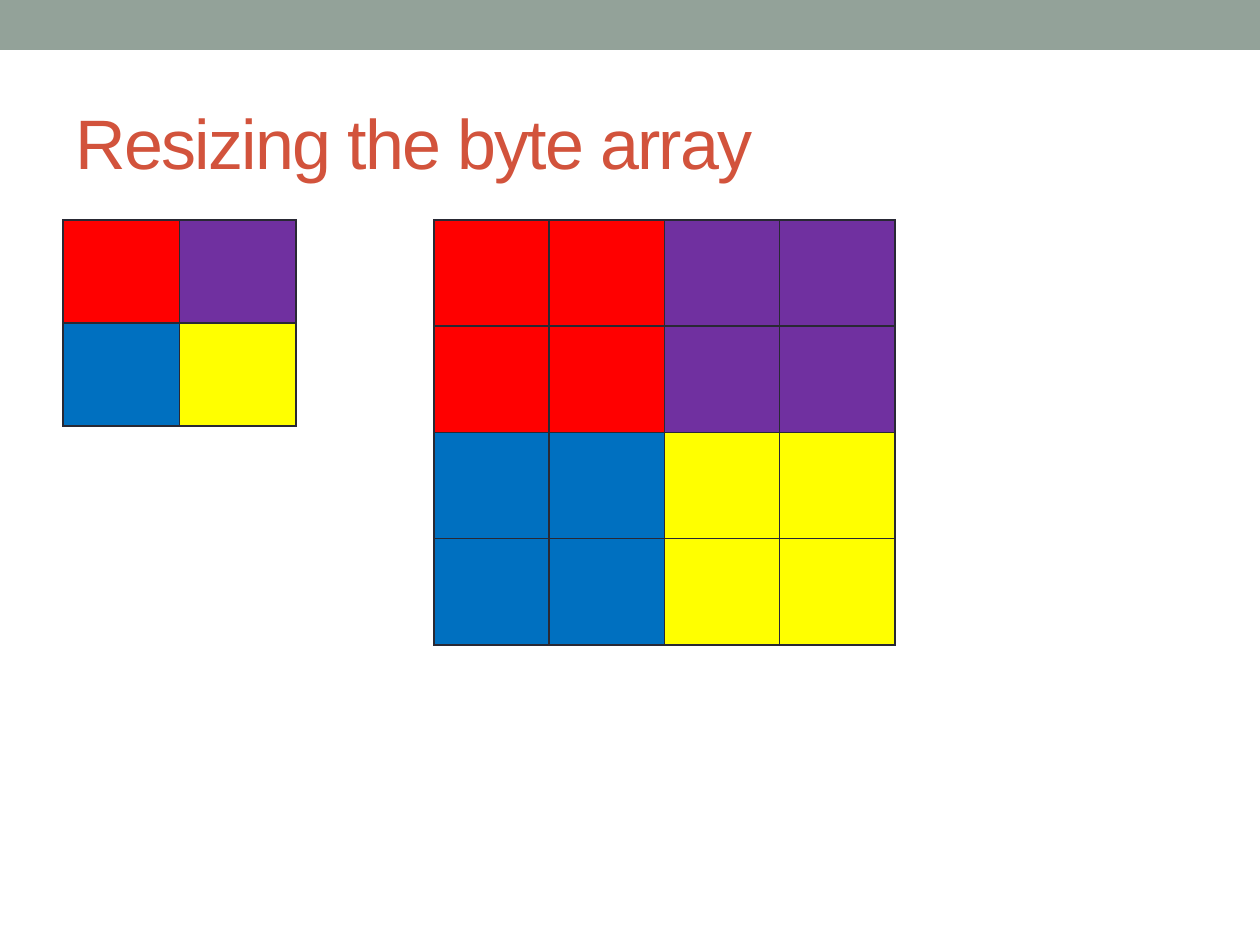
from lxml.etree import SubElement
from pptx import Presentation
from pptx.dml.color import RGBColor
from pptx.enum.shapes import MSO_SHAPE
from pptx.enum.text import MSO_ANCHOR, PP_ALIGN
from pptx.oxml.ns import qn
from pptx.util import Emu, Pt

PX_PER_INCH = 126
SAGE = RGBColor(0x93, 0xA2, 0x99)
RUST = RGBColor(0xD2, 0x53, 0x3C)
INK = RGBColor(0x29, 0x29, 0x34)
RED = RGBColor(0xFF, 0x00, 0x00)
PURPLE = RGBColor(0x70, 0x30, 0xA0)
BLUE = RGBColor(0x00, 0x70, 0xC0)
YELLOW = RGBColor(0xFF, 0xFF, 0x00)
PIXELS = [[RED, PURPLE], [BLUE, YELLOW]]


def px(length):
    return Emu(round(length * 914400 / PX_PER_INCH))


def add_band(page, box):
    band = page.shapes.add_shape(MSO_SHAPE.RECTANGLE, *map(px, box))
    band.shadow.inherit = False
    band.fill.solid()
    band.fill.fore_color.rgb = SAGE
    band.line.fill.background()


def add_title(page, box, text):
    frame = page.shapes.add_textbox(*map(px, box)).text_frame
    frame.word_wrap = True
    frame.vertical_anchor = MSO_ANCHOR.MIDDLE
    para = frame.paragraphs[0]
    para.alignment = PP_ALIGN.LEFT
    span = para.add_run()
    span.text = text
    span.font.name = "Arial"
    span.font.size = Pt(40)
    span.font.color.rgb = RUST
    span.font._element.set("spc", "-100")


def outline_cell(cell):
    properties = cell._tc.get_or_add_tcPr()
    for index, side in enumerate(("a:lnL", "a:lnR", "a:lnT", "a:lnB")):
        line = SubElement(properties, qn(side), w=str(Pt(1)))
        fill = SubElement(line, qn("a:solidFill"))
        SubElement(fill, qn("a:srgbClr"), val=str(INK))
        properties.remove(line)
        properties.insert(index, line)


def add_pixel_grid(page, box, repeat):
    left, top, width, height = box
    count = len(PIXELS) * repeat
    grid = page.shapes.add_table(count, count, *map(px, box)).table
    for column in grid.columns:
        column.width = px(width / count)
    for row in grid.rows:
        row.height = px(height / count)
    for row in range(count):
        for column in range(count):
            cell = grid.cell(row, column)
            cell.fill.solid()
            cell.fill.fore_color.rgb = PIXELS[row // repeat][column // repeat]
            outline_cell(cell)


def main():
    deck = Presentation()
    deck.slide_width, deck.slide_height = px(1260), px(945)
    page = deck.slides.add_slide(deck.slide_layouts[6])
    add_band(page, (0, 0, 1260, 50))
    add_title(page, (63, 73, 1134, 136), "Resizing the byte array")
    add_pixel_grid(page, (63, 220, 233, 206), repeat=1)
    add_pixel_grid(page, (434, 220, 461, 425), repeat=2)
    deck.save("out.pptx")


if __name__ == "__main__":
    main()
